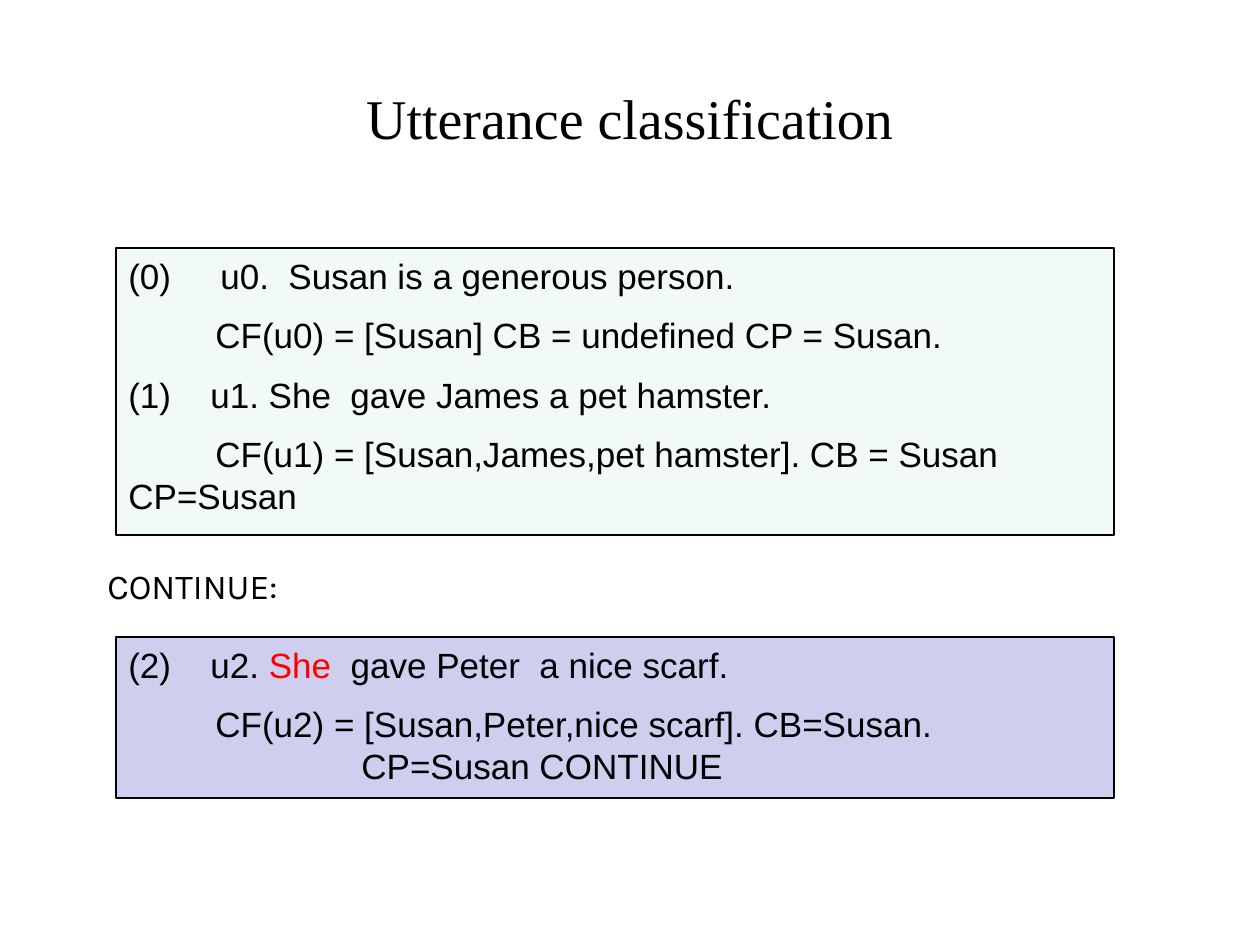
from lxml import etree
from pptx import Presentation
from pptx.dml.color import RGBColor
from pptx.enum.shapes import MSO_SHAPE
from pptx.enum.text import MSO_ANCHOR, PP_ALIGN
from pptx.oxml.ns import qn
from pptx.util import Pt

RECT = MSO_SHAPE.RECTANGLE
TOP, MIDDLE = MSO_ANCHOR.TOP, MSO_ANCHOR.MIDDLE
LEFT, CENTER = PP_ALIGN.LEFT, PP_ALIGN.CENTER
BLACK = RGBColor(0, 0, 0)
RED = RGBColor(255, 0, 0)
MINT = RGBColor(0xF1, 0xF9, 0xF9)
LILAC = RGBColor(0xCE, 0xCE, 0xEF)
PX = 914400 // 126
NEW = "She "
CONTEXT = [
    ([92], ["(0)\tu0.  Susan is a generous person."]),
    ([87], ["\tCF(u0) = [Susan] CB = undefined CP = Susan."]),
    ([82], ["(1)\tu1. She  gave James a pet hamster."]),
    ([87], ["\tCF(u1) = [Susan,James,pet hamster]. CB = Susan CP=Susan"]),
]
NEXT = [
    ([82], ["(2)\tu2. ", NEW, " gave Peter  a nice scarf."]),
    ([87, 233], ["\tCF(u2) = [Susan,Peter,nice scarf]. CB=Susan. \v\t\tCP=Susan CONTINUE"]),
]


def scale(box):
    """Turn a box in px into EMU."""
    return [n * PX for n in box]


def style(para, font, size, align):
    """Format a paragraph and its runs, with the new pronoun in red."""
    para.alignment = align
    for run in para.runs:
        run.font.name = font
        run.font.size = Pt(size)
        run.font.color.rgb = RED if run.text == NEW else BLACK


def set_tabs(para, stops):
    """Give a paragraph left tab stops in px."""
    tabs = etree.SubElement(para._p.get_or_add_pPr(), qn("a:tabLst"))
    for stop in stops:
        etree.SubElement(tabs, qn("a:tab"), pos=str(stop * PX), algn="l")


def add_title(slide, box, text):
    """Fill and place the title."""
    title = slide.shapes.title
    title.left, title.top, title.width, title.height = scale(box)
    frame = title.text_frame
    frame.text = text
    frame.vertical_anchor = MIDDLE
    style(frame.paragraphs[0], "Times New Roman", 32, CENTER)


def add_panel(slide, box, fill, lines):
    """Draw a filled panel of utterances with their centers."""
    panel = slide.shapes.add_shape(RECT, *scale(box))
    panel.shadow.inherit = False
    panel.fill.solid()
    panel.fill.fore_color.rgb = fill
    panel.line.color.rgb = BLACK
    panel.line.width = Pt(0.75)
    frame = panel.text_frame
    frame.word_wrap = True
    frame.vertical_anchor = TOP
    for i, (stops, parts) in enumerate(lines):
        para = frame.add_paragraph() if i else frame.paragraphs[0]
        para.text = parts[0]
        for part in parts[1:]:
            para.add_run().text = part
        para.space_before = Pt(10)
        style(para, "Arial", 20, LEFT)
        set_tabs(para, stops)


def add_label(slide, box, text):
    """Write the label between the panels."""
    frame = slide.shapes.add_textbox(*scale(box)).text_frame
    frame.word_wrap = True
    frame.text = text
    para = frame.paragraphs[0]
    para.line_spacing = 0.9
    para.space_before = Pt(10)
    style(para, "Karla", 20, LEFT)


def main():
    """Build the slide and save it."""
    deck = Presentation()
    deck.slide_width, deck.slide_height = scale((1260, 945))
    slide = deck.slides.add_slide(deck.slide_layouts[5])
    add_title(slide, (63, 38, 1134, 158), "Utterance classification")
    add_panel(slide, (116, 248, 998, 287), MINT, CONTEXT)
    add_panel(slide, (116, 637, 998, 161), LILAC, NEXT)
    add_label(slide, (95, 563, 1126, 63), "CONTINUE:")
    deck.save("out.pptx")


if __name__ == "__main__":
    main()
